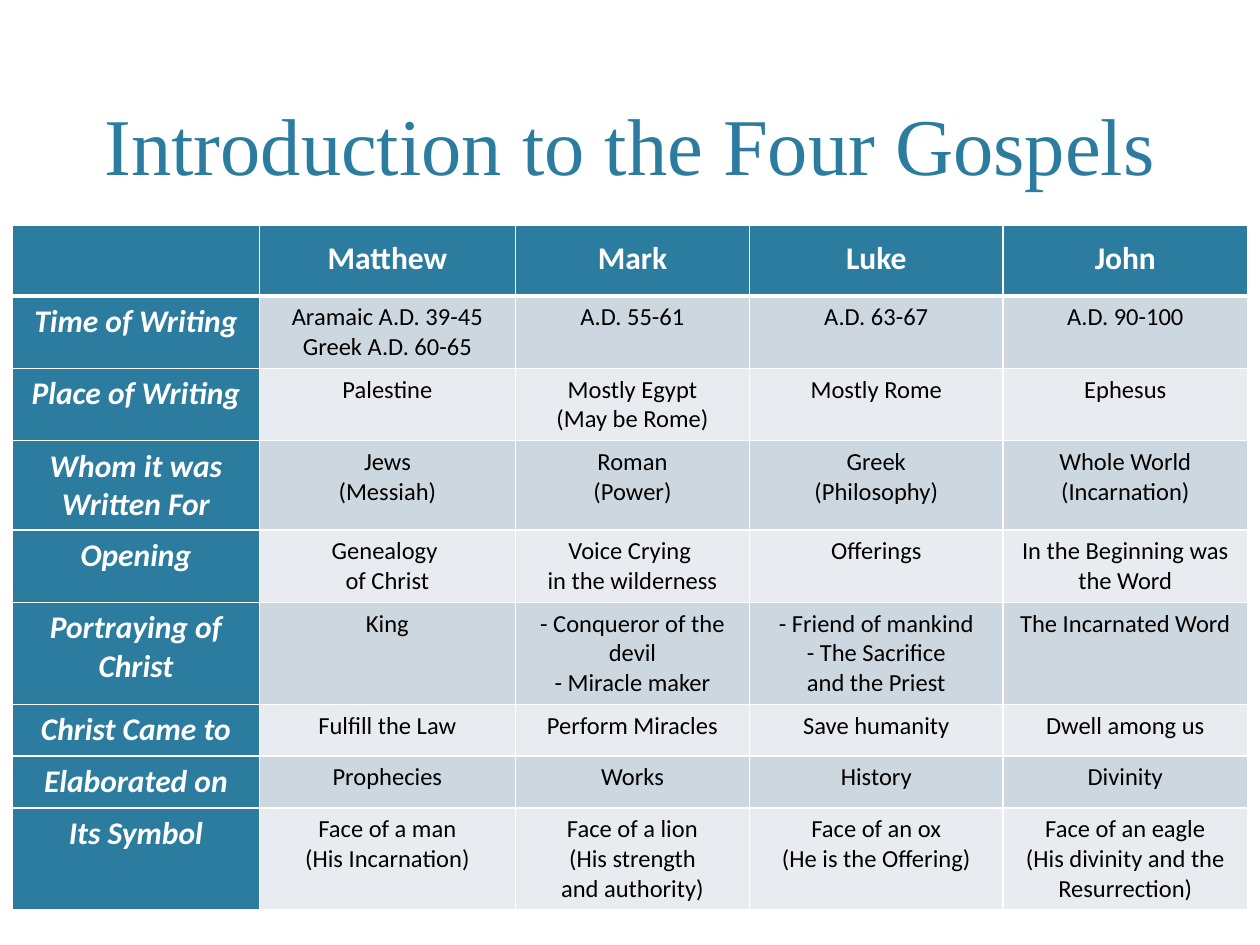
from lxml.etree import SubElement
from pptx import Presentation
from pptx.dml.color import RGBColor as Rgb
from pptx.enum.text import MSO_ANCHOR as Anchor, PP_ALIGN as Align
from pptx.oxml.ns import qn
from pptx.util import Cm, Pt

COLORS = {"teal": "2C7C9F", "white": "FFFFFF", "black": "000000",
          "odd": "CDD7DF", "even": "E8ECF0"}
HEADING = {"name": "Calibri", "size": Pt(18), "bold": True, "italic": False}
ASPECT = {**HEADING, "italic": True}
DETAIL = {"name": "Calibri", "size": Pt(14), "bold": False, "italic": False}
TITLE = {"name": "Times New Roman", "size": Pt(46), "bold": False}

GOSPELS = ["", "Matthew", "Mark", "Luke", "John"]
ASPECTS = [
    ["Time of Writing", "Aramaic A.D. 39-45\nGreek A.D. 60-65", "A.D. 55-61",
     "A.D. 63-67", "A.D. 90-100"],
    ["Place of Writing", "Palestine", "Mostly Egypt\n(May be Rome)",
     "Mostly Rome", "Ephesus"],
    ["Whom it was Written For", "Jews\n(Messiah)", "Roman\n(Power)",
     "Greek\n(Philosophy)", "Whole World\n(Incarnation)"],
    ["Opening", "Genealogy \nof Christ", "Voice Crying \nin the wilderness",
     "Offerings", "In the Beginning was the Word"],
    ["Portraying of Christ", "King", "- Conqueror of the devil\n- Miracle maker",
     "- Friend of mankind\n- The Sacrifice\nand the Priest", "The Incarnated Word"],
    ["Christ Came to", "Fulfill the Law", "Perform Miracles", "Save humanity",
     "Dwell among us"],
    ["Elaborated on", "Prophecies", "Works", "History", "Divinity"],
    ["Its Symbol", "Face of a man\n(His Incarnation)",
     "Face of a lion\n(His strength\nand authority)",
     "Face of an ox\n(He is the Offering)",
     "Face of an eagle\n(His divinity and the Resurrection)"],
]
COLUMN_WIDTHS = [4.98, 5.16, 4.72, 5.11, 4.93]
ROW_HEIGHTS = [1.42] + [1.04] * 7 + [1.78]


class GospelSlide:
    """Holds the style and the current slide, and adds its elements."""

    def __init__(self, deck, colors):
        self.colors = colors
        self.slide = deck.slides.add_slide(deck.slide_layouts[5])

    def color(self, name):
        return Rgb.from_string(self.colors[name])

    def fill_text(self, frame, text, style, color, spacing=None):
        frame.text = text
        for line in frame.paragraphs:
            line.alignment = Align.CENTER
            line.line_spacing = spacing
            for run in line.runs:
                for attribute, value in style.items():
                    setattr(run.font, attribute, value)
                run.font.color.rgb = self.color(color)

    def title(self, text, **place):
        heading = self.slide.shapes.title
        for attribute, value in place.items():
            setattr(heading, attribute, Cm(value))
        heading.text_frame.vertical_anchor = Anchor.BOTTOM
        self.fill_text(heading.text_frame, text, TITLE, "teal")

    def borders(self, cell, widths):
        properties = cell._tc.get_or_add_tcPr()
        for side, width in widths.items():
            line = SubElement(properties, qn(f"a:ln{side}"), w=str(Pt(width)))
            fill = SubElement(line, qn("a:solidFill"))
            SubElement(fill, qn("a:srgbClr"), val=self.colors["white"])

    def cell(self, cell, row, column, text):
        self.borders(cell, {"L": 1, "R": 1, "T": 3 if row == 1 else 1,
                            "B": 3 if row == 0 else 1})
        is_label = row == 0 or column == 0
        band = "odd" if row % 2 else "even"
        cell.fill.solid()
        cell.fill.fore_color.rgb = self.color("teal" if is_label else band)
        style = HEADING if row == 0 else ASPECT if column == 0 else DETAIL
        self.fill_text(cell.text_frame, text, style,
                       "white" if is_label else "black", 1.2 if row == 0 else None)

    def table(self, rows, widths, heights, left, top, width, height):
        frame = self.slide.shapes.add_table(
            len(rows), len(widths), Cm(left), Cm(top), Cm(width), Cm(height))
        comparison = frame.table
        for column, size in zip(comparison.columns, widths):
            column.width = Cm(size)
        for row, size in zip(comparison.rows, heights):
            row.height = Cm(size)
        frame.height = Cm(height)
        for r, texts in enumerate(rows):
            for c, text in enumerate(texts):
                self.cell(comparison.cell(r, c), r, c, text)


def main():
    deck = Presentation()
    deck.slide_width, deck.slide_height = Cm(25.4), Cm(19.05)
    gospels = GospelSlide(deck, COLORS)
    gospels.title("Introduction to the Four Gospels",
                  left=0.94, top=0.28, width=23.5, height=3.71)
    gospels.table([GOSPELS] + ASPECTS, COLUMN_WIDTHS, ROW_HEIGHTS,
                  left=0.25, top=4.55, width=24.9, height=14.22)
    deck.save("out.pptx")


if __name__ == "__main__":
    main()
